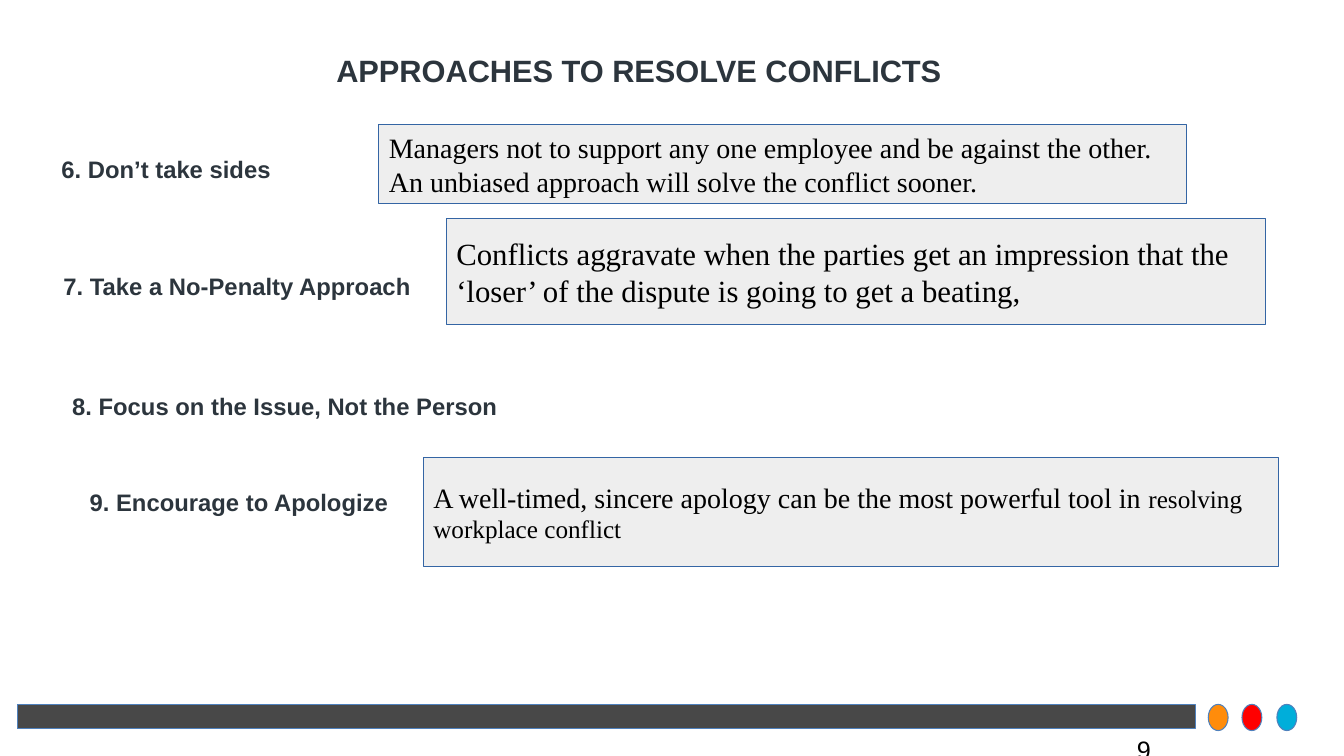
"""Build the slide on approaches to resolve conflicts."""
from pptx import Presentation
from pptx.dml.color import RGBColor
from pptx.enum.shapes import MSO_SHAPE as Shape
from pptx.enum.text import MSO_ANCHOR as Anchor, MSO_AUTO_SIZE as AutoSize, PP_ALIGN as Align
from pptx.util import Cm, Pt

SLATE = RGBColor(0x2C, 0x35, 0x3D)
BLACK = RGBColor(0x00, 0x00, 0x00)
PALE_GREY = RGBColor(0xEE, 0xEE, 0xEE)
BOX_BLUE = RGBColor(0x34, 0x65, 0xA4)
FOOTER_BLUE = RGBColor(0x4F, 0x81, 0xBD)
CHARCOAL = RGBColor(0x48, 0x48, 0x48)
ORANGE = RGBColor(0xFF, 0x8C, 0x0B)
RED = RGBColor(0xFF, 0x00, 0x00)
CYAN = RGBColor(0x00, 0xAE, 0xDA)
SANS, SERIF = "Arial", "Times New Roman"


def add_span(para, text, size, font, color, bold=False):
    span = para.add_run()
    span.text = text
    span.font.size = Pt(size)
    span.font.name = font
    span.font.color.rgb = color
    span.font.bold = bold


def add_outlined(kind, place, fill, line):
    shape = page.shapes.add_shape(kind, *map(Cm, place))
    shape.shadow.inherit = False
    shape.fill.solid()
    shape.fill.fore_color.rgb = fill
    shape.line.color.rgb = line
    shape.line.width = Pt(0.75)
    return shape


deck = Presentation()
deck.slide_width, deck.slide_height = Cm(33.87), Cm(19.05)
page = deck.slides.add_slide(deck.slide_layouts[5])

add_outlined(Shape.RECTANGLE, (0.43, 17.75, 29.69, 0.61), CHARCOAL, FOOTER_BLUE)
for left, color in ((30.45, ORANGE), (31.3, RED), (32.18, CYAN)):
    add_outlined(Shape.OVAL, (left, 17.75, 0.5, 0.66), color, FOOTER_BLUE)

title = page.shapes.title
title.left, title.top, title.width, title.height = Cm(6.17), Cm(0.76), Cm(19.86), Cm(2.03)
frame = title.text_frame
frame.auto_size = AutoSize.NONE
frame.vertical_anchor = Anchor.MIDDLE
frame.margin_left = frame.margin_right = frame.margin_top = frame.margin_bottom = 0
para = frame.paragraphs[0]
para.alignment = Align.CENTER
add_span(para, "APPROACHES TO RESOLVE CONFLICTS", 22, SANS, SLATE, True)

labels = (
    ((1.3, 3.78, 6.71, 1.02), "6. Don’t take sides", 17, SLATE, True),
    ((1.35, 6.73, 10.08, 1.3), "7. Take a No-Penalty Approach", 17, SLATE, True),
    ((1.57, 9.75, 15.09, 1.8), "8. Focus on the Issue, Not the Person", 17, SLATE, True),
    ((2.01, 12.17, 8.05, 1.02), "9. Encourage to Apologize", 17, SLATE, True),
    ((28.4, 18.39, 1.19, 0.97), "9", 18, BLACK, False),
)
for place, text, size, color, bold in labels:
    box = page.shapes.add_textbox(*map(Cm, place))
    box.text_frame.word_wrap = True
    add_span(box.text_frame.paragraphs[0], text, size, SANS, color, bold)

explanations = (
    ((9.55, 3.15, 20.35, 1.98), (
        (("Managers not to support any one employee and be against the other.", 20),),
        (("An unbiased approach will solve the conflict sooner.", 20),))),
    ((11.25, 5.51, 20.65, 2.67), (
        (("Conflicts aggravate when the parties get an impression that the", 22),),
        (("‘loser’ of the dispute is going to get a beating,", 22),))),
    ((10.67, 11.53, 21.56, 2.74), (
        (("A well-timed, sincere apology can be the most powerful tool in ", 20), ("resolving", 18)),
        (("workplace conflict", 18),))),
)
for place, lines in explanations:
    box = add_outlined(Shape.RECTANGLE, place, PALE_GREY, BOX_BLUE)
    frame = box.text_frame
    frame.word_wrap = True
    frame.vertical_anchor = Anchor.MIDDLE
    for number, spans in enumerate(lines):
        para = frame.add_paragraph() if number else frame.paragraphs[0]
        para.alignment = Align.LEFT
        for text, size in spans:
            add_span(para, text, size, SERIF, BLACK)

deck.save("out.pptx")
